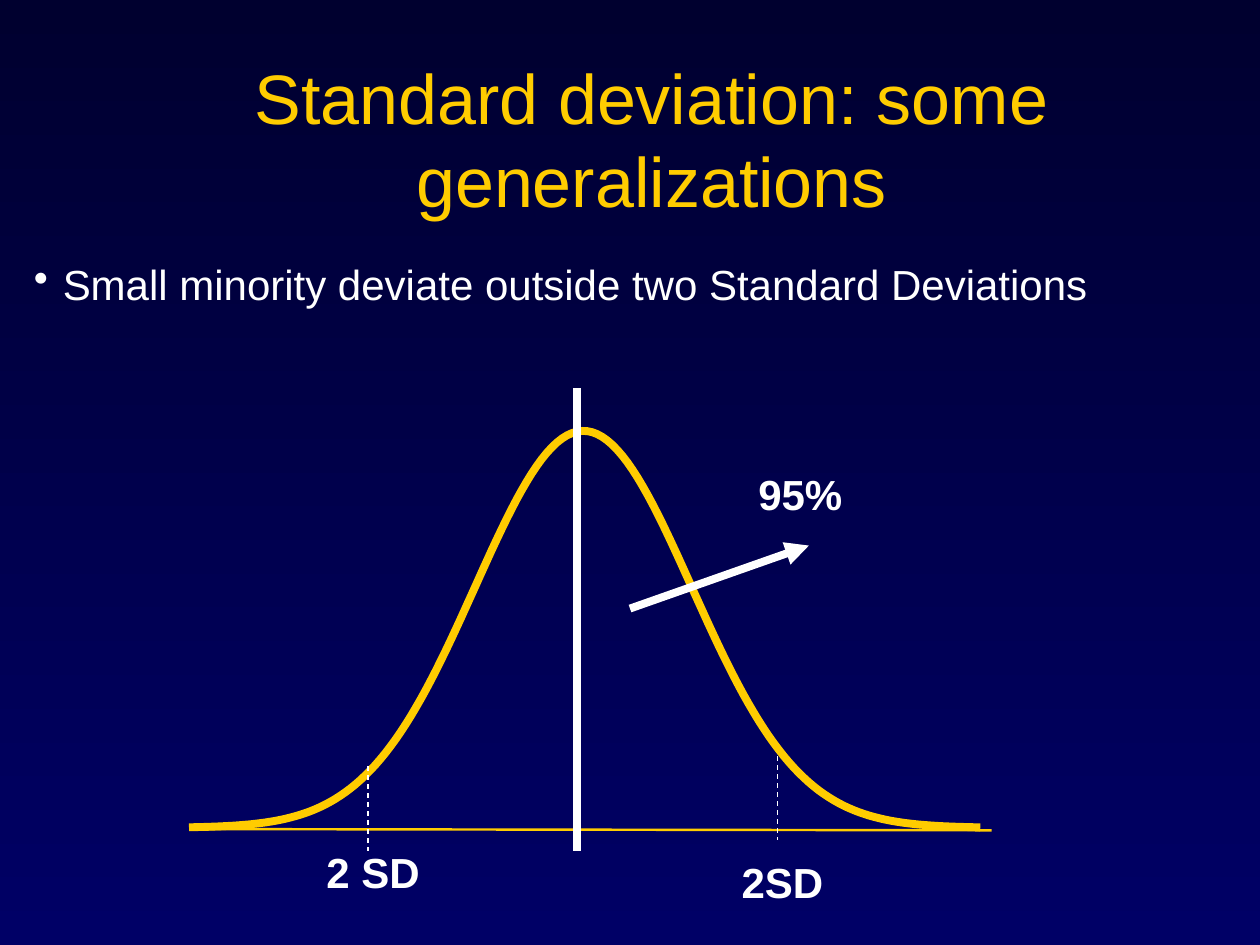
from dataclasses import dataclass
from math import exp
from typing import Optional

from lxml.etree import SubElement
from pptx import Presentation
from pptx.dml.color import RGBColor
from pptx.enum.dml import MSO_LINE_DASH_STYLE as Dash
from pptx.enum.shapes import MSO_CONNECTOR as Connector
from pptx.enum.text import MSO_ANCHOR as Anchor, MSO_AUTO_SIZE as AutoSize, PP_ALIGN as Align
from pptx.oxml.ns import qn
from pptx.util import Pt

PX = 9144
GOLD, WHITE = "FFCC00", "FFFFFF"
BACKGROUND = ("00002F", "000066")
MEAN, SIGMA, PEAK, BASE = 463, 86, 342, 657
CURVE_LEFT, CURVE_RIGHT, CURVE_STEP = 150, 778, 4


@dataclass
class Label:
    text: str
    left: int
    top: int
    width: int
    height: int = 50
    size: int = 24
    color: str = WHITE
    bold: bool = False
    align: Align = Align.CENTER
    bullet: bool = False
    title: bool = False


@dataclass
class Line:
    x1: int
    y1: int
    x2: int
    y2: int
    color: str = WHITE
    width: float = 4.5
    dash: Optional[Dash] = None
    arrow: bool = False


TITLE = Label("Standard deviation: some generalizations", 67, 47, 900, 125,
              size=40, color=GOLD, title=True)
BASELINE = Line(158, 658, 787, 659, GOLD, 1.38)
LINES = [
    Line(458, 308, 458, 675),
    Line(617, 600, 617, 667, width=0.75, dash=Dash.DASH),
    Line(500, 483, 642, 433, arrow=True),
    Line(292, 608, 292, 675, width=0.75, dash=Dash.DASH),
]
LABELS = [
    Label("2 SD", 242, 667, 108, bold=True),
    Label("2SD", 567, 675, 108, bold=True),
    Label("95%", 592, 367, 117, bold=True, align=Align.LEFT),
    Label("Small minority deviate outside two Standard Deviations", 17, 200, 983,
          align=Align.LEFT, bullet=True),
]


def rgb(color: str) -> RGBColor:
    return RGBColor.from_string(color)


def paint_background(page) -> None:
    fill = page.background.fill
    fill.gradient()
    fill.gradient_angle = 270
    for stop, color in zip(fill.gradient_stops, BACKGROUND):
        stop.color.rgb = rgb(color)


def add_label(page, label: Label) -> None:
    box = page.shapes.add_textbox(label.left * PX, label.top * PX,
                                  label.width * PX, label.height * PX)
    frame = box.text_frame
    frame.word_wrap = True
    para = frame.paragraphs[0]
    para.alignment = label.align
    if label.title:
        frame.vertical_anchor = Anchor.MIDDLE
    else:
        frame.auto_size = AutoSize.SHAPE_TO_FIT_TEXT
        properties = para._p.get_or_add_pPr()
        before = SubElement(properties, qn("a:spcBef"))
        SubElement(before, qn("a:spcPct"), val="50000")
        if label.bullet:
            properties.set("marL", str(23 * PX))
            properties.set("indent", str(-23 * PX))
            SubElement(properties, qn("a:buChar"), char="•")
    span = para.add_run()
    span.text = label.text
    span.font.name = "Arial"
    span.font.size = Pt(label.size)
    span.font.bold = label.bold
    span.font.color.rgb = rgb(label.color)


def add_line(page, line: Line) -> None:
    connector = page.shapes.add_connector(Connector.STRAIGHT, line.x1 * PX, line.y1 * PX,
                                          line.x2 * PX, line.y2 * PX)
    connector.line.color.rgb = rgb(line.color)
    connector.line.width = Pt(line.width)
    if line.dash:
        connector.line.dash_style = line.dash
    if line.arrow:
        SubElement(connector.line._get_or_add_ln(), qn("a:tailEnd"), type="triangle")
    SubElement(connector._element.spPr, qn("a:effectLst"))


def add_bell_curve(page) -> None:
    def point(x: int) -> tuple[int, int]:
        height = (BASE - PEAK) * exp(-((x - MEAN) / SIGMA) ** 2 / 2)
        return x * PX, round((BASE - height) * PX)

    first, *rest = [point(x) for x in range(CURVE_LEFT, CURVE_RIGHT + 1, CURVE_STEP)]
    builder = page.shapes.build_freeform(*first)
    builder.add_line_segments(rest, close=False)
    curve = builder.convert_to_shape()
    curve.shadow.inherit = False
    curve.fill.background()
    curve.line.color.rgb = rgb(GOLD)
    curve.line.width = Pt(4.5)


def main() -> None:
    deck = Presentation()
    deck.slide_width, deck.slide_height = 1000 * PX, 750 * PX
    page = deck.slides.add_slide(deck.slide_layouts[6])
    paint_background(page)
    add_label(page, TITLE)
    add_line(page, BASELINE)
    add_bell_curve(page)
    for line in LINES:
        add_line(page, line)
    for label in LABELS:
        add_label(page, label)
    deck.save("out.pptx")


if __name__ == "__main__":
    main()
